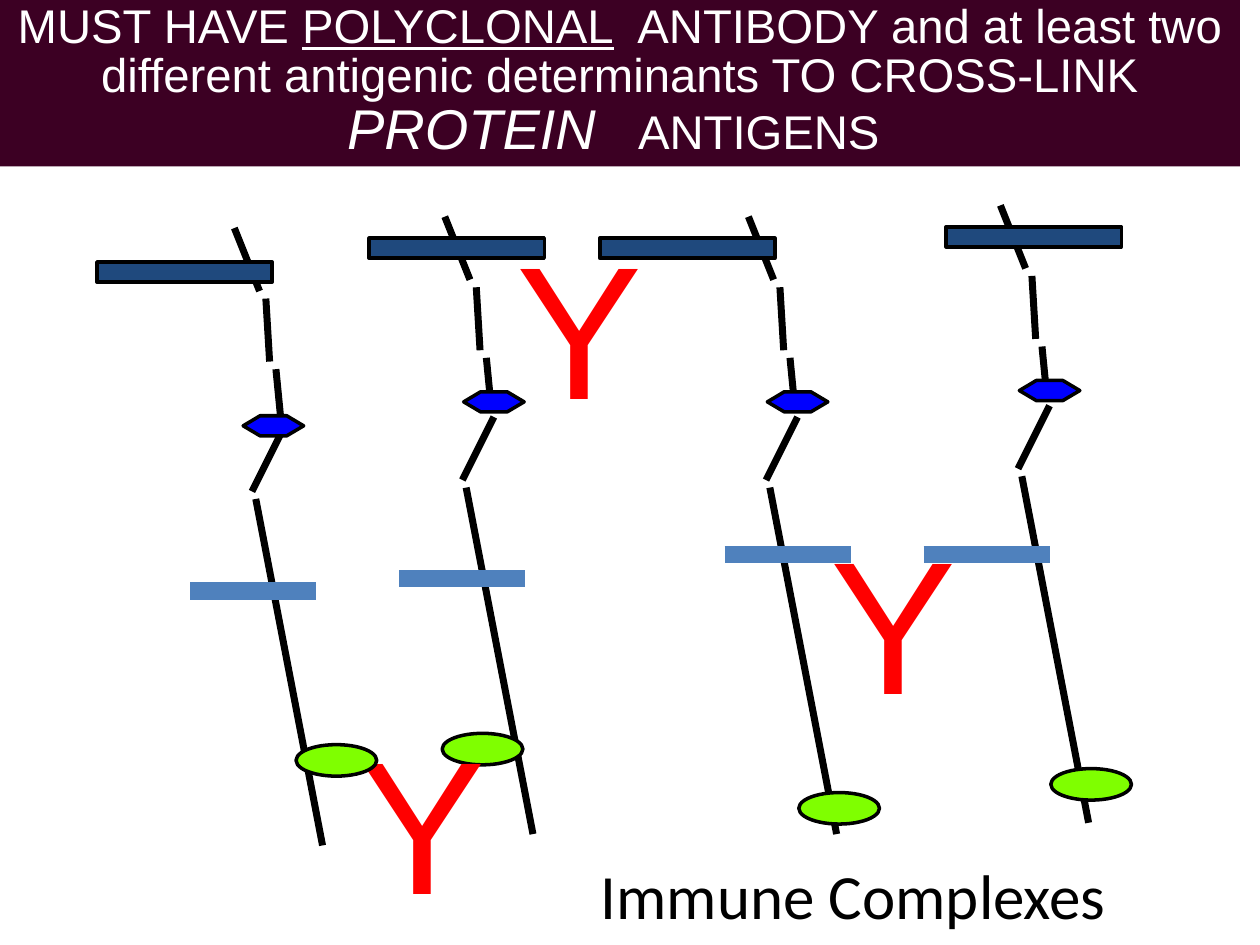
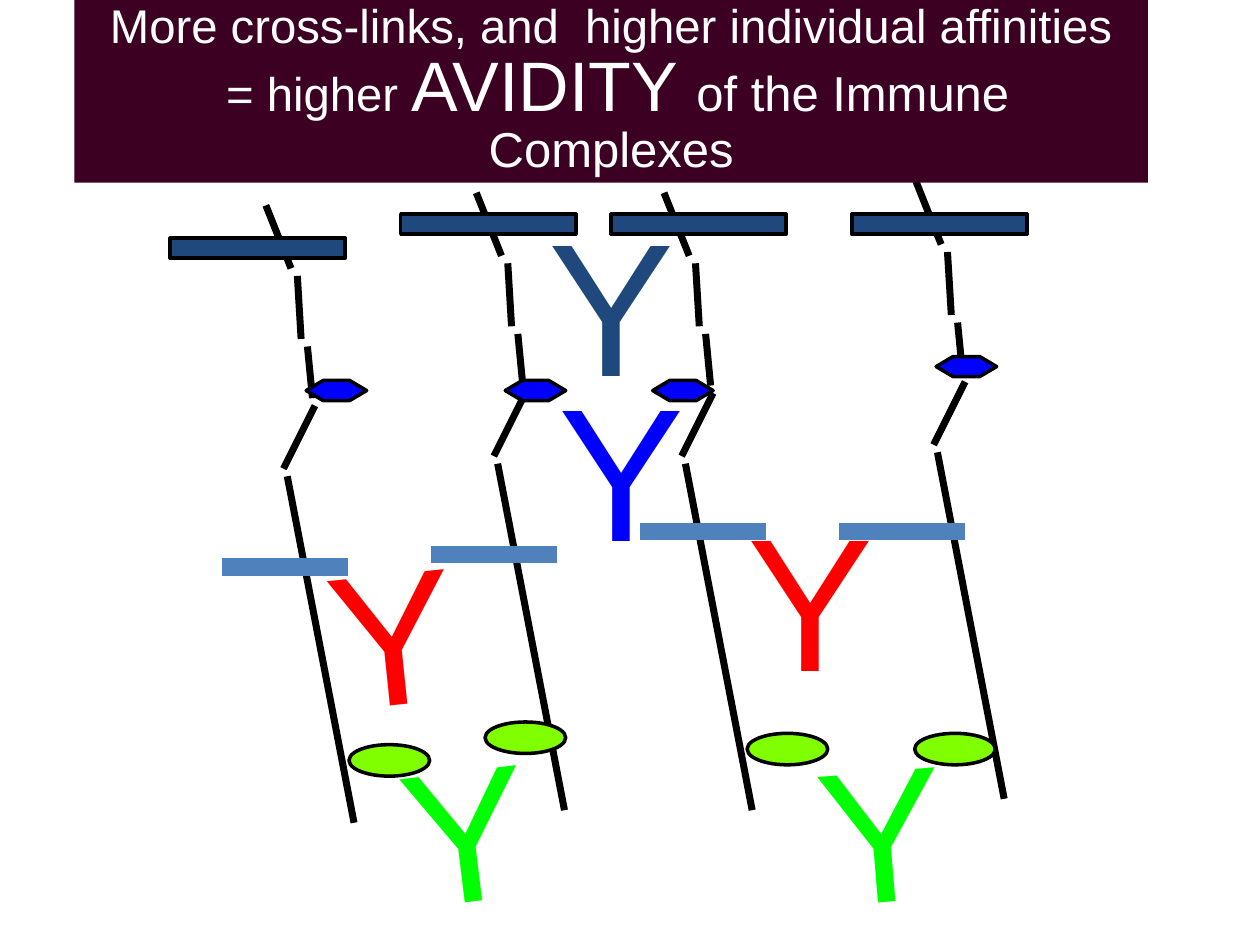
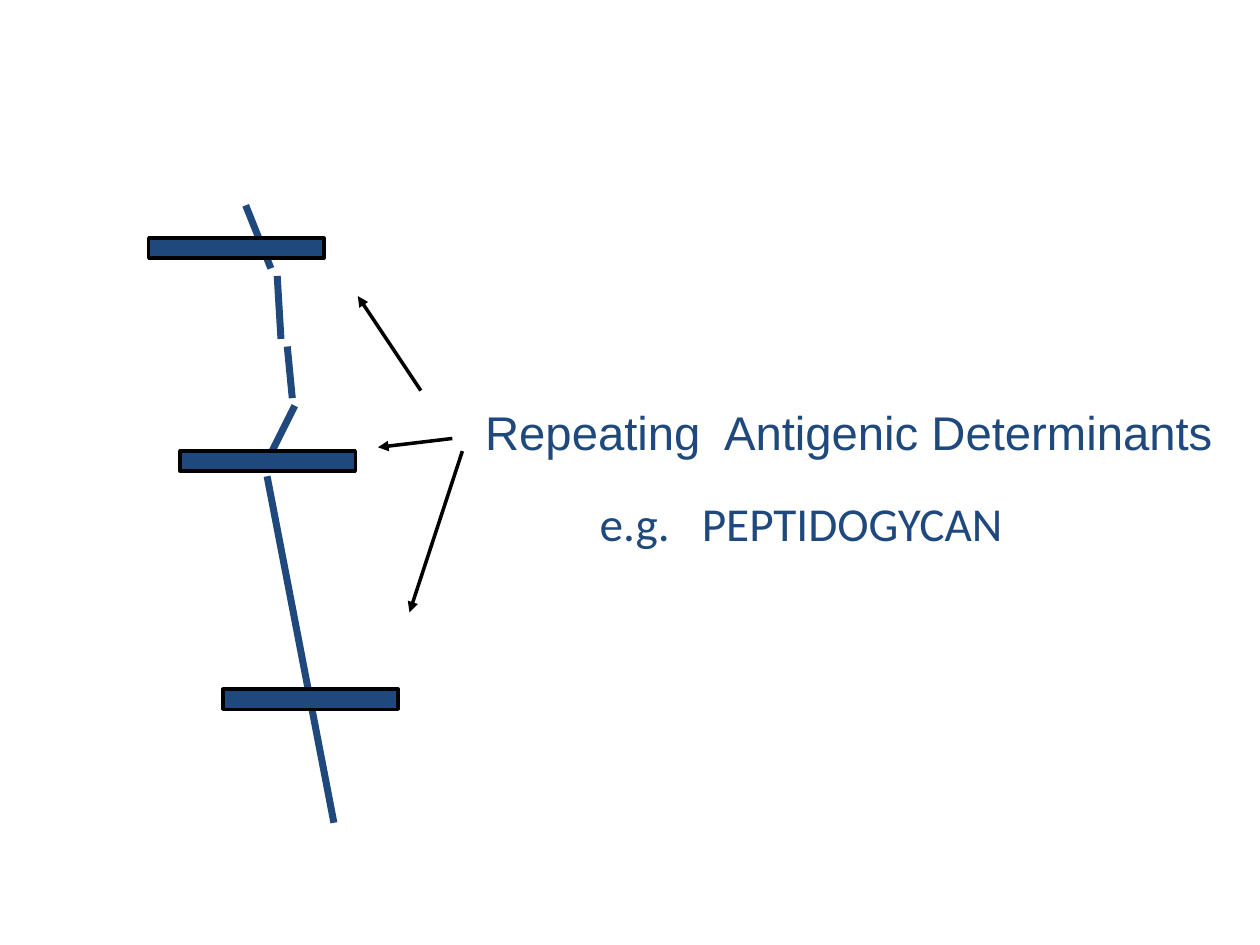
from dataclasses import dataclass
from typing import NamedTuple

from lxml import etree
from pptx import Presentation
from pptx.dml.color import RGBColor
from pptx.enum.shapes import MSO_CONNECTOR, MSO_SHAPE
from pptx.enum.text import MSO_ANCHOR, MSO_AUTO_SIZE, PP_ALIGN
from pptx.oxml.ns import qn
from pptx.util import Inches, Pt

STRAIGHT = MSO_CONNECTOR.STRAIGHT
RECTANGLE, ELLIPSE, HEXAGON = MSO_SHAPE.RECTANGLE, MSO_SHAPE.OVAL, MSO_SHAPE.HEXAGON
TOP = MSO_ANCHOR.TOP
FIXED_SIZE, FIT_SHAPE = MSO_AUTO_SIZE.NONE, MSO_AUTO_SIZE.SHAPE_TO_FIT_TEXT
CENTER, LEFT = PP_ALIGN.CENTER, PP_ALIGN.LEFT

COLORS = {
    "black": "000000",
    "white": "FFFFFF",
    "band": "3C0023",
    "navy": "1F497D",
    "sky": "4F81BD",
    "blue": "0000FF",
    "lime": "7FFF00",
    "green": "00FF00",
    "red": "FF0000",
}
TITLE_LAYOUT, BLANK_LAYOUT = 5, 6
TIGHT_SPACING = 0.87


class Point(NamedTuple):
    x: float
    y: float


class Box(NamedTuple):
    left: float
    top: float
    width: float
    height: float


class Margins(NamedTuple):
    side: float
    edge: float


class TextRun(NamedTuple):
    text: str
    size: float = 27
    italic: bool = False
    underline: bool = False


@dataclass
class Strand:
    top: Point
    bar: Point
    hexagon: Point
    sky_bar: Point
    ellipse: Point


@dataclass
class Antibody:
    position: Point
    color: str = "red"
    rotation: float = 0


@dataclass
class ComplexSlide:
    band: Box
    title: list[list[TextRun]]
    back_strands: list[Strand]
    antibodies: list[Antibody]
    front_strand: Strand


TIGHT = Margins(0.08, 0.03)
NORMAL = Margins(0.1, 0.05)
WIDE = Margins(0.11, 0.06)

STRAND_SEGMENTS = [
    (Point(0, 0), Point(0.2, 0.5)),
    (Point(0.25, 0.56), Point(0.28, 1.06)),
    (Point(0.33, 1.12), Point(0.37, 1.53)),
    (Point(0.39, 1.59), Point(0.14, 2.09)),
    (Point(0.17, 2.15), Point(0.7, 4.9)),
]

COMPLEX_SLIDES = [
    ComplexSlide(
        Box(0, 0, 9.84, 1.32),
        [[
            TextRun("MUST HAVE "),
            TextRun("POLYCLONAL", underline=True),
            TextRun("  ANTIBODY and at least two different antigenic determinants TO CROSS-LINK "),
            TextRun("PROTEIN ", 32, italic=True),
            TextRun("  ", italic=True),
            TextRun("ANTIGENS "),
        ]],
        [
            Strand(Point(7.94, 1.63), Point(7.51, 1.8), Point(8.09, 3.02), Point(7.33, 4.4), Point(8.34, 6.1)),
            Strand(Point(5.94, 1.72), Point(4.76, 1.89), Point(6.09, 3.11), Point(5.75, 4.4), Point(6.34, 6.29)),
            Strand(Point(3.53, 1.72), Point(2.93, 1.89), Point(3.68, 3.11), Point(3.17, 4.59), Point(3.51, 5.82)),
        ],
        [
            Antibody(Point(4.02, 1.64)),
            Antibody(Point(6.51, 3.98)),
            Antibody(Point(2.77, 5.57)),
        ],
        Strand(Point(1.86, 1.81), Point(0.77, 2.08), Point(1.93, 3.3), Point(1.51, 4.69), Point(2.35, 5.91)),
    ),
    ComplexSlide(
        Box(0.59, 0, 8.52, 1.45),
        [
            [TextRun("More cross-links, and  higher individual affinities")],
            [TextRun(" = higher "), TextRun("AVIDITY ", 40), TextRun("of the Immune Complexes", 28)],
        ],
        [
            Strand(Point(7.27, 1.44), Point(6.76, 1.7), Point(7.43, 2.83), Point(6.66, 4.22), Point(7.26, 5.82)),
            Strand(Point(5.27, 1.53), Point(4.85, 1.7), Point(5.18, 3.02), Point(5.08, 4.22), Point(5.93, 5.82)),
            Strand(Point(3.78, 1.53), Point(3.18, 1.7), Point(4.01, 3.02), Point(3.42, 4.4), Point(3.85, 5.73)),
        ],
        [
            Antibody(Point(4.27, 1.46), "navy"),
            Antibody(Point(4.35, 2.77), "blue"),
            Antibody(Point(5.85, 3.8)),
            Antibody(Point(2.53, 4.07), rotation=354.1),
            Antibody(Point(3.11, 5.63), "green", 353),
            Antibody(Point(6.41, 5.63), "green", 355.2),
        ],
        Strand(Point(2.11, 1.63), Point(1.35, 1.89), Point(2.43, 3.02), Point(1.76, 4.5), Point(2.77, 5.91)),
    ),
]

REPEATED_BARS = [Point(1.18, 1.89), Point(1.43, 3.58), Point(1.77, 5.47)]
LABEL_ARROWS = [
    (Point(3.34, 3.1), Point(2.84, 2.35)),
    (Point(3.67, 3.58), Point(3.25, 4.86)),
    (Point(3.59, 3.48), Point(3, 3.55)),
]


def rgb(color: str) -> RGBColor:
    return RGBColor.from_string(COLORS[color])


def add_line(slide, start: Point, end: Point, color: str, width: float, arrow: bool = False) -> None:
    connector = slide.shapes.add_connector(STRAIGHT, *(Inches(value) for value in (*start, *end)))
    connector.line.color.rgb = rgb(color)
    connector.line.width = Pt(width)
    if arrow:
        etree.SubElement(connector.line._get_or_add_ln(), qn("a:tailEnd"), type="triangle")
    etree.SubElement(connector._element.spPr, qn("a:effectLst"))


def add_marker(slide, kind, position: Point, width: float, height: float, color: str):
    marker = slide.shapes.add_shape(kind, *(Inches(value) for value in (*position, width, height)))
    marker.shadow.inherit = False
    marker.fill.solid()
    marker.fill.fore_color.rgb = rgb(color)
    marker.line.color.rgb = rgb("black")
    marker.line.width = Pt(2)
    return marker


def add_bar(slide, position: Point) -> None:
    add_marker(slide, RECTANGLE, position, 1.39, 0.16, "navy")


def add_backbone(slide, top: Point, color: str) -> None:
    for start, end in STRAND_SEGMENTS:
        add_line(
            slide,
            Point(top.x + start.x, top.y + start.y),
            Point(top.x + end.x, top.y + end.y),
            color,
            4,
        )


def add_strand(slide, strand: Strand) -> None:
    add_backbone(slide, strand.top, "black")
    add_marker(slide, ELLIPSE, strand.ellipse, 0.64, 0.25, "lime")
    add_line(slide, strand.sky_bar, Point(strand.sky_bar.x + 1, strand.sky_bar.y), "sky", 10)
    add_bar(slide, strand.bar)
    hexagon = add_marker(slide, HEXAGON, strand.hexagon, 0.48, 0.16, "blue")
    hexagon.adjustments[0] = 0.84


def set_margins(frame, margins: Margins) -> None:
    frame.margin_left = frame.margin_right = Inches(margins.side)
    frame.margin_top = frame.margin_bottom = Inches(margins.edge)


def add_run(paragraph, text_run: TextRun, font_name: str, color: str) -> None:
    run = paragraph.add_run()
    run.text = text_run.text
    run.font.name = font_name
    run.font.size = Pt(text_run.size)
    run.font.italic = text_run.italic
    run.font.underline = text_run.underline
    run.font.color.rgb = rgb(color)


def add_label(
    slide,
    box: Box,
    text_run: TextRun,
    color: str,
    font_name: str = "Arial",
    margins: Margins = TIGHT,
    wrap: bool = False,
    line_spacing: float = 1.0,
):
    label = slide.shapes.add_textbox(*(Inches(value) for value in box))
    frame = label.text_frame
    frame.word_wrap = wrap
    frame.auto_size = FIT_SHAPE
    set_margins(frame, margins)
    paragraph = frame.paragraphs[0]
    paragraph.alignment = LEFT
    paragraph.line_spacing = line_spacing
    add_run(paragraph, text_run, font_name, color)
    return label


def add_antibody(slide, antibody: Antibody) -> None:
    label = add_label(slide, Box(*antibody.position, 1.17, 1.88), TextRun("Y", 108), antibody.color)
    label.rotation = antibody.rotation


def format_title(slide, band: Box, lines: list[list[TextRun]]) -> None:
    title = slide.shapes.title
    title.left, title.top, title.width, title.height = (Inches(value) for value in band)
    title.fill.solid()
    title.fill.fore_color.rgb = rgb("band")
    frame = title.text_frame
    frame.word_wrap = True
    frame.auto_size = FIXED_SIZE
    frame.vertical_anchor = TOP
    set_margins(frame, TIGHT)
    for index, line in enumerate(lines):
        paragraph = frame.add_paragraph() if index else frame.paragraphs[0]
        paragraph.alignment = CENTER
        paragraph.line_spacing = TIGHT_SPACING
        for text_run in line:
            add_run(paragraph, text_run, "Arial", "white")
    title.element.getparent().append(title.element)


def add_complex_slide(presentation, content: ComplexSlide):
    slide = presentation.slides.add_slide(presentation.slide_layouts[TITLE_LAYOUT])
    for strand in content.back_strands:
        add_strand(slide, strand)
    for antibody in content.antibodies:
        add_antibody(slide, antibody)
    add_strand(slide, content.front_strand)
    format_title(slide, content.band, content.title)
    return slide


def add_repeating_slide(presentation) -> None:
    slide = presentation.slides.add_slide(presentation.slide_layouts[BLANK_LAYOUT])
    add_backbone(slide, Point(1.95, 1.63), "navy")
    for position in REPEATED_BARS:
        add_bar(slide, position)
    add_label(
        slide,
        Box(3.77, 3.23, 5.98, 0.46),
        TextRun("Repeating  Antigenic Determinants"),
        "navy",
        line_spacing=TIGHT_SPACING,
    )
    for start, end in LABEL_ARROWS:
        add_line(slide, start, end, "black", 2, arrow=True)
    add_label(
        slide, Box(4.65, 3.86, 3.96, 0.57), TextRun("e.g.   PEPTIDOGYCAN"), "navy", "Calibri", WIDE
    )


def main() -> None:
    presentation = Presentation()
    presentation.slide_width, presentation.slide_height = Inches(10), Inches(7.5)
    polyclonal_slide, _ = [add_complex_slide(presentation, content) for content in COMPLEX_SLIDES]
    add_label(
        polyclonal_slide,
        Box(4.67, 6.75, 4.59, 0.71),
        TextRun("Immune Complexes", 36),
        "black",
        "Calibri",
        NORMAL,
        wrap=True,
    )
    add_repeating_slide(presentation)
    presentation.save("out.pptx")


if __name__ == "__main__":
    main()
